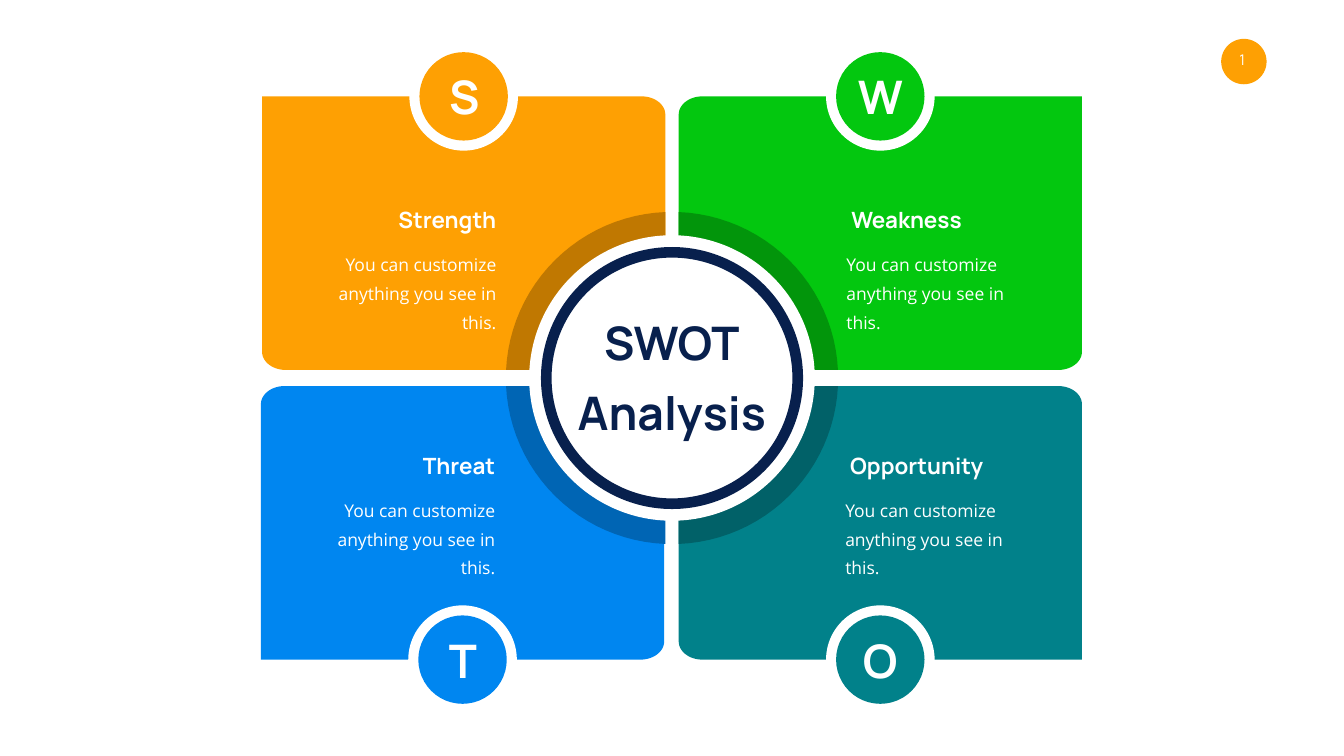
import math
from dataclasses import dataclass

import pptx
import pptx.util
import pptx.dml.color
import pptx.enum.shapes
import pptx.enum.text

KIND = pptx.enum.shapes.MSO_SHAPE
ALIGN = pptx.enum.text.PP_ALIGN
EDGE = pptx.enum.text.MSO_ANCHOR
GROW = pptx.enum.text.MSO_AUTO_SIZE.SHAPE_TO_FIT_TEXT
Pt = pptx.util.Pt
Inches = pptx.util.Inches
SIZE = Inches(26.66), Inches(15)
COLS = 200


@dataclass(frozen=True)
class Theme:
    white = "FFFFFF"
    navy = "08204D"
    orange = "FEA003"
    green = "03C70F"
    blue = "0086F0"
    teal = "01818A"
    amber = "C07801"
    moss = "02950B"
    cobalt = "0065B4"
    pine = "016168"
    head = "Manrope"
    body = "Open Sans"
    large = Pt(66)
    mid = Pt(32)
    small = Pt(25)
    tiny = Pt(21)


@dataclass(frozen=True)
class Part:
    name: str
    width: float
    mark: str
    span: float
    fill: str
    shade: str
    side: int
    row: int
    shift: float = 0


THEME = Theme()
FREE = {"word_wrap": False, "auto_size": GROW}
TITLE = {
    "frame": {**FREE, "vertical_anchor": EDGE.MIDDLE},
    "para": {"alignment": ALIGN.CENTER, "line_spacing": Pt(100)},
    "font": {"name": THEME.head, "size": THEME.large, "bold": True},
    "color": THEME.navy,
}
MARK = {**TITLE, "para": {"alignment": ALIGN.CENTER}, "color": THEME.white}
HEAD = {
    "frame": {**FREE, "vertical_anchor": EDGE.BOTTOM},
    "para": {},
    "font": {"name": THEME.head, "size": THEME.mid, "bold": True},
    "color": THEME.white,
}
BODY = {
    "frame": {"word_wrap": True, "auto_size": GROW, "margin_left": 0},
    "para": {"line_spacing": Pt(41), "space_before": Pt(5)},
    "font": {"name": THEME.body, "size": THEME.small},
    "color": THEME.white,
}
PAGE = {
    "frame": {"word_wrap": True, "auto_size": GROW, "margin_top": Inches(0.1),
              "margin_bottom": Inches(0.1), "margin_right": Inches(0.24)},
    "para": {"alignment": ALIGN.CENTER},
    "font": {"name": THEME.head, "size": THEME.tiny},
    "color": THEME.white,
}

NOTE = "You can customize anything you see in this."
PARTS = [
    Part("Strength", 16.35, "S", 5.8, THEME.orange, THEME.amber, -1, -1),
    Part("Weakness", 19.28, "W", 8.6, THEME.green, THEME.moss, 1, -1),
    Part("Threat", 12.68, "T", 5.55, THEME.blue, THEME.cobalt, -1, 1, -0.17),
    Part("Opportunity", 22.28, "O", 7, THEME.teal, THEME.pine, 1, 1),
]
GAP = 1, 1.2
FAR = 61, 41.92
CURVE = 3.53, 2.7
BADGE = 31


def rgb(code):
    return pptx.dml.color.RGBColor.from_string(code)


def assign(item, values):
    for key, value in values.items():
        setattr(item, key, value)


def arc(x, y, wide, high, start, end, steps=24):
    turns = [start + (end - start) * i / steps for i in range(steps + 1)]
    return [(x + wide * math.cos(t), y + high * math.sin(t)) for t in turns]


def panel():
    (left, top), (right, low), (wide, high) = GAP, FAR, CURVE
    turn = math.pi / 2
    return [(left, top),
            *arc(right - wide, top + high, wide, high, -turn, 0),
            (right, low),
            *arc(left + wide, low - high, wide, high, turn, 2 * turn)]


def sector(reach):
    start, end = math.asin(GAP[1] / reach), math.acos(GAP[0] / reach)
    return [GAP, *arc(0, 0, reach, reach, start, end)]


class Board:
    def __init__(self, slide, size):
        self.slide = slide
        self.mid = size[0] / 2, size[1] / 2
        self.cell = size[0] / COLS

    def spot(self, x, y):
        return (round(self.mid[0] + x * self.cell),
                round(self.mid[1] + y * self.cell))

    def box(self, x, y, wide, high):
        return (*self.spot(x, y), round(wide * self.cell),
                round(high * self.cell))

    def paint(self, shape, fill):
        shape.shadow.inherit = False
        shape.fill.solid()
        shape.fill.fore_color.rgb = rgb(fill)
        shape.line.fill.background()
        return shape

    def disc(self, x, y, reach, fill, kind=KIND.OVAL):
        place = self.box(x - reach, y - reach, 2 * reach, 2 * reach)
        return self.paint(self.slide.shapes.add_shape(kind, *place), fill)

    def ring(self, x, y, reach, band, fill):
        shape = self.disc(x, y, reach, fill, KIND.DONUT)
        shape.adjustments[0] = band / (2 * reach)

    def shape(self, points, part, shift=0):
        spots = [self.spot(x * part.side + shift, y * part.row)
                 for x, y in points]
        form = self.slide.shapes.build_freeform(*spots[0])
        form.add_line_segments(spots[1:], close=True)
        return form.convert_to_shape()

    def style(self, frame, words, form, align=None):
        frame.text = words
        assign(frame, form["frame"])
        for para in frame.paragraphs:
            assign(para, form["para"])
            if align is not None:
                para.alignment = align
            for run in para.runs:
                assign(run.font, form["font"])
                run.font.color.rgb = rgb(form["color"])

    def text(self, words, place, form, align=None):
        area = self.slide.shapes.add_textbox(*self.box(*place))
        self.style(area.text_frame, words, form, align)

    def title(self, words, place):
        area = self.slide.shapes.title
        keys = "left", "top", "width", "height"
        assign(area, dict(zip(keys, self.box(*place))))
        self.style(area.text_frame, words, TITLE)
        self.slide.shapes._spTree.append(area._element)

    def copy(self, part):
        right = part.side > 0
        edge = (25.95 if right else -25.4) - (0.17 if part.row > 0 else 0)
        top = 10.58 if part.row > 0 else -26.03
        align = ALIGN.LEFT if right else ALIGN.RIGHT
        rows = [(part.name, top, part.width, 4.8, HEAD),
                (NOTE, top + 6.08, 28.9, 9, BODY)]
        for words, y, wide, high, form in rows:
            x = edge if right else edge - wide
            self.text(words, (x, y, wide, high), form, align)

    def badge(self, part):
        x, y = BADGE * part.side + part.shift, FAR[1] * part.row
        self.disc(x, y, 8.08, THEME.white)
        self.disc(x, y, 6.58, part.fill)
        place = x - part.span / 2, y - 4.54, part.span, 9.08
        self.text(part.mark, place, MARK)


def main():
    deck = pptx.Presentation()
    deck.slide_width, deck.slide_height = SIZE
    board = Board(deck.slides.add_slide(deck.slide_layouts[5]), SIZE)
    board.disc(85.1, -47.1, 3.38, THEME.orange)
    board.text("1", (82.44, -49.5, 5.92, 4.58), PAGE)
    for part in PARTS:
        board.paint(board.shape(panel(), part, part.shift), part.fill)
    for part in PARTS:
        board.paint(board.shape(sector(24.72), part), part.shade)
    board.disc(0, 0, 21.25, THEME.white)
    board.ring(0, 0, 19.5, 1.58, THEME.navy)
    for part in PARTS:
        board.copy(part)
        board.badge(part)
    board.title("SWOT\nAnalysis", (-15.75, -11.8, 31.43, 21.23))
    deck.save("out.pptx")


if __name__ == "__main__":
    main()
